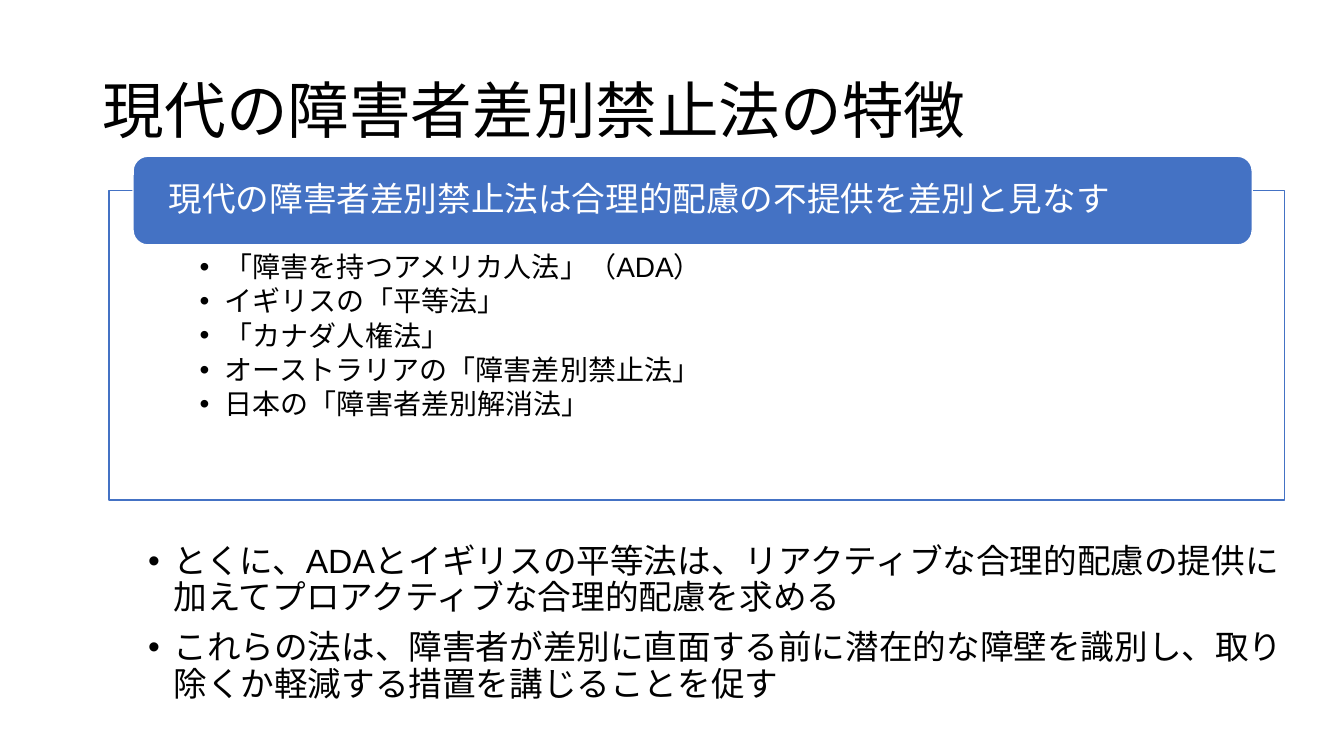
import pptx
import pptx.util
import pptx.dml.color
import pptx.enum.lang
import pptx.enum.shapes
import pptx.enum.text
import lxml.etree
from pptx.oxml.ns import qn

Inches = pptx.util.Inches
Pt = pptx.util.Pt
MSO_SHAPE = pptx.enum.shapes.MSO_SHAPE
MSO_ANCHOR = pptx.enum.text.MSO_ANCHOR

BLUE, WHITE, BLACK = "4472C4", "FFFFFF", "000000"


def color(hex_code):
    return pptx.dml.color.RGBColor.from_string(hex_code)


def write(tf, paragraphs, size, hex_code, bullet=False, before=0, after=0):
    """Fill a frame; each paragraph is a list of (text, font name) runs."""
    tf.word_wrap = True
    tf.auto_size = pptx.enum.text.MSO_AUTO_SIZE.NONE
    for i, runs in enumerate(paragraphs):
        p = tf.add_paragraph() if i else tf.paragraphs[0]
        p.alignment = pptx.enum.text.PP_ALIGN.LEFT
        p.line_spacing = 0.9
        p.space_before, p.space_after = Pt(before), Pt(after)
        for text, font in runs:
            r = p.add_run()
            r.text = text
            r.font.name, r.font.size = font, Pt(size)
            r.font.color.rgb = color(hex_code)
            r.font.language_id = pptx.enum.lang.MSO_LANGUAGE_ID.JAPANESE
        if bullet:
            pPr = p._p.get_or_add_pPr()
            pPr.set("marL", str(Inches(0.25)))
            pPr.set("indent", str(-Inches(0.25)))
            lxml.etree.SubElement(pPr, qn("a:buFont")).set("typeface", "Arial")
            lxml.etree.SubElement(pPr, qn("a:buChar")).set("char", "•")


prs = pptx.Presentation()
prs.slide_width, prs.slide_height = Inches(13.33), Inches(7.5)
s = prs.slides.add_slide(prs.slide_layouts[1])

# Title
title = s.shapes.title
title.left, title.top = Inches(0.92), Inches(0.4)
title.width, title.height = Inches(11.5), Inches(1.45)
title.text_frame.vertical_anchor = MSO_ANCHOR.MIDDLE
write(title.text_frame, [[("現代の障害者差別禁止法の特徴", "Calibri")]], 44, BLACK)

# Frame listing the laws, then the heading bar that overlaps its top edge
laws = [
    [("「障害を持つアメリカ人法」", "Calibri"), ("（ADA）", "Arial")],
    [("イギリスの「平等法」", "Calibri")],
    [("「カナダ人権法」", "Calibri")],
    [("オーストラリアの「障害差別禁止法」", "Calibri")],
    [("日本の「障害者差別解消法」", "Calibri")],
]
heading = [[("現代の障害者差別禁止法は合理的配慮の不提供を差別と見なす", "Calibri")]]

frame = s.shapes.add_shape(MSO_SHAPE.RECTANGLE, Inches(1.08), Inches(1.89),
                           Inches(11.66), Inches(3.07))
bar = s.shapes.add_shape(MSO_SHAPE.ROUNDED_RECTANGLE, Inches(1.32), Inches(1.55),
                         Inches(11.1), Inches(0.88))
for sp, fill, line in ((frame, WHITE, BLUE), (bar, BLUE, WHITE)):
    sp.shadow.inherit = False
    sp.fill.solid()
    sp.fill.fore_color.rgb = color(fill)
    sp.line.color.rgb = color(line)
    sp.line.width = Pt(1)

frame_color = frame._element.spPr.find(qn("a:solidFill"))[0]
lxml.etree.SubElement(frame_color, qn("a:alpha")).set("val", "90000")

# The top margin keeps the first law clear of the heading bar
tf = frame.text_frame
tf.vertical_anchor = MSO_ANCHOR.TOP
tf.margin_left = tf.margin_right = Inches(0.9)
tf.margin_top, tf.margin_bottom = Inches(0.62), Inches(0.16)
write(tf, laws, 20, BLACK, bullet=True, after=3)
for p in tf.paragraphs:
    p.level = 1

tf = bar.text_frame
tf.vertical_anchor = MSO_ANCHOR.MIDDLE
tf.margin_left = tf.margin_right = Inches(0.31)
tf.margin_top = tf.margin_bottom = 0
write(tf, heading, 24, WHITE)

# Closing points
body = s.placeholders[1]
body.left, body.top = Inches(1.37), Inches(5.35)
body.width, body.height = Inches(11.5), Inches(1.9)
points = [
    [("とくに、", "Calibri"), ("ADAと", "Arial"),
     ("イギリスの平等法は、リアクティブな合理的配慮の提供に加えてプロアクティブな合理的配慮を求める", "Calibri")],
    [("これらの法は、障害者が差別に直面する前に潜在的な障壁を識別し、"
      "取り除くか軽減する措置を講じることを促す", "Calibri")],
]
write(body.text_frame, points, 24, BLACK, bullet=True, before=10)

prs.save("out.pptx")
